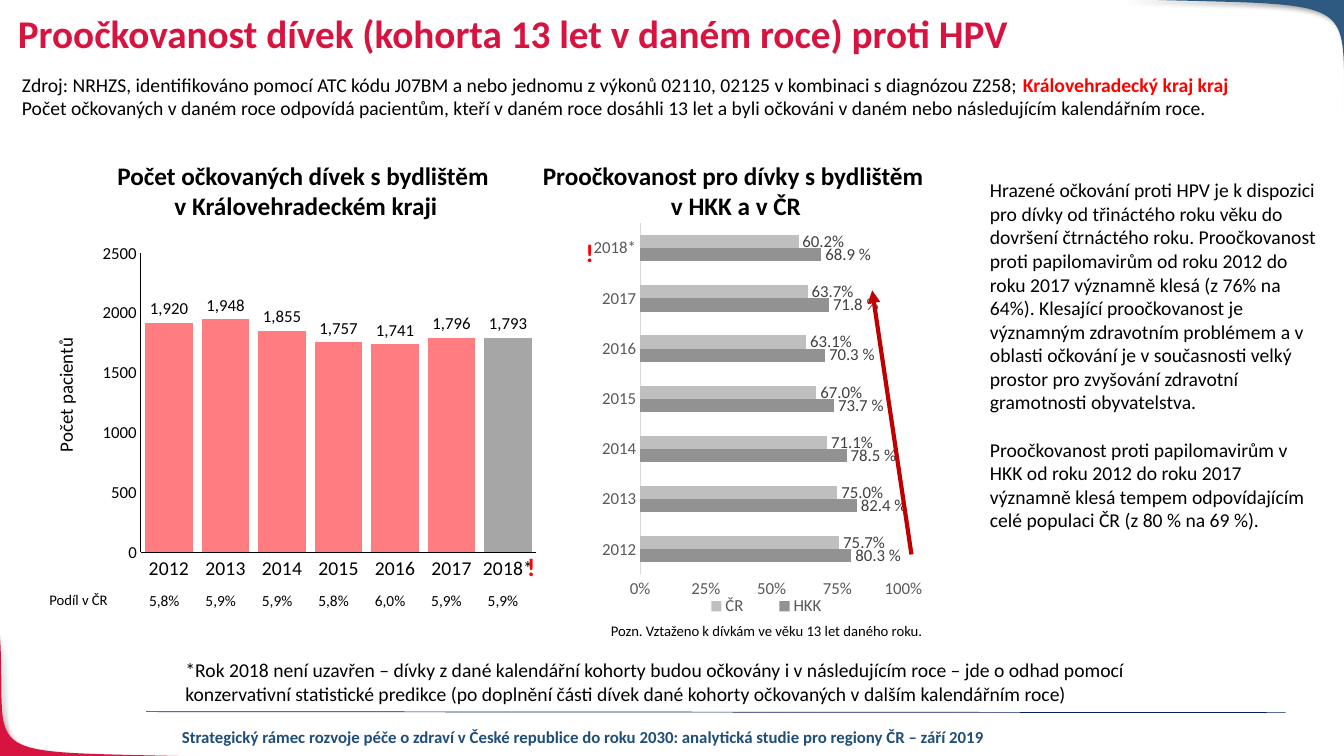
from lxml.etree import SubElement
from pptx import Presentation
from pptx.chart.data import CategoryChartData
from pptx.dml.color import RGBColor
from pptx.enum.chart import XL_CHART_TYPE, XL_LABEL_POSITION, XL_LEGEND_POSITION, XL_TICK_MARK
from pptx.enum.text import MSO_ANCHOR, PP_ALIGN
from pptx.oxml import parse_xml
from pptx.oxml.ns import nsdecls, qn
from pptx.util import Inches, Pt

presentation = Presentation()
presentation.slide_width = Inches(13.33)
presentation.slide_height = Inches(7.5)
slide = presentation.slides.add_slide(presentation.slide_layouts[6])


def set_font(font, size, color, bold=False):
    font.name = "Calibri"
    font.size = Pt(size)
    font.bold = bold
    font.color.rgb = RGBColor.from_string(color)


def add_text(box, lines, size, color="000000", bold=False, align=PP_ALIGN.LEFT, wrap=True):
    frame = slide.shapes.add_textbox(*map(Inches, box)).text_frame
    frame.word_wrap = wrap
    for index, line in enumerate(lines):
        paragraph = frame.add_paragraph() if index else frame.paragraphs[0]
        paragraph.text = line
        paragraph.alignment = align
        set_font(paragraph.runs[0].font, size, color, bold)
    return frame


# Corner decorations: one cubic curve each, closed at the slide corner
corners = [
    ("D71440", [(2.13, 7.51), (-0.34, 7.44), (0.08, 7.59), (0, 6.3)], (-0.01, 7.51)),
    ("2E5980", [(11.11, -0.01), (13.7, 0.07), (13.26, -0.1), (13.35, 1.42)], (13.35, -0.01)),
]
steps = 40
for color, controls, tip in corners:
    curve = []
    for step in range(steps + 1):
        t = step / steps
        weights = [(1 - t) ** 3, 3 * t * (1 - t) ** 2, 3 * t ** 2 * (1 - t), t ** 3]
        curve.append(tuple(Inches(sum(w * point[axis] for w, point in zip(weights, controls)))
                           for axis in (0, 1)))
    outline = slide.shapes.build_freeform(*curve[0])
    outline.add_line_segments(curve[1:] + [tuple(map(Inches, tip))], close=True)
    corner = outline.convert_to_shape()
    corner.fill.solid()
    corner.fill.fore_color.rgb = RGBColor.from_string(color)
    corner.line.fill.background()
    corner.shadow.inherit = False
    corner._element.spPr.find(qn("a:effectLst")).append(parse_xml(
        f'<a:outerShdw {nsdecls("a")} blurRad="{Pt(4)}" dist="{Pt(3)}" dir="2700000">'
        '<a:srgbClr val="000000"><a:alpha val="40000"/></a:srgbClr></a:outerShdw>'))

# Title, source and footer
title = add_text((0.08, 0.1, 11.5, 0.69),
                 ["Proočkovanost dívek (kohorta 13 let v daném roce) proti HPV"], 28, "D71440", True)
title.paragraphs[0].line_spacing = 0.9

source = add_text((0.12, 0.67, 12.23, 0.57), [
    "Zdroj: NRHZS, identifikováno pomocí ATC kódu J07BM a nebo jednomu z výkonů 02110, 02125 "
    "v kombinaci s diagnózou Z258; ",
    "Počet očkovaných v daném roce odpovídá pacientům, kteří v daném roce dosáhli 13 let "
    "a byli očkováni v daném nebo následujícím kalendářním roce."], 14, wrap=False)
region = source.paragraphs[0].add_run()
region.text = "Královehradecký kraj kraj"
set_font(region.font, 14, "FF0000", True)

add_text((1.57, 7.16, 8.43, 0.3), [
    "Strategický rámec rozvoje péče o zdraví v České republice do roku 2030: "
    "analytická studie pro regiony ČR – září 2019"], 12, "1F4E79", True, PP_ALIGN.CENTER)

# Commentary
commentary = add_text((9.72, 1.72, 3.46, 4.1), [
    "Hrazené očkování proti HPV je k dispozici pro dívky od třináctého roku věku do dovršení "
    "čtrnáctého roku. Proočkovanost proti papilomavirům od roku 2012 do roku 2017 významně klesá "
    "(z 76% na 64%). Klesající proočkovanost je významným zdravotním problémem a v oblasti očkování "
    "je v současnosti velký prostor pro zvyšování zdravotní gramotnosti obyvatelstva.",
    "Proočkovanost proti papilomavirům v HKK od roku 2012 do roku 2017 významně klesá tempem "
    "odpovídajícím celé populaci ČR (z 80 % na 69 %)."], 14)
commentary.paragraphs[1].space_before = Pt(17)

# Chart headings
add_text((1, 1.54, 4.07, 0.71), ["Počet očkovaných dívek s bydlištěm ", "v Královehradeckém kraji"],
         18, bold=True, align=PP_ALIGN.CENTER)
add_text((5.2, 1.54, 4.2, 0.71), ["Proočkovanost pro dívky s bydlištěm ", "v HKK a v ČR"],
         18, bold=True, align=PP_ALIGN.CENTER)

# Charts: series are (name, values, colour, label format)
years = ["2012", "2013", "2014", "2015", "2016", "2017", "2018*"]
charts = [
    dict(kind=XL_CHART_TYPE.COLUMN_CLUSTERED, box=(0.39, 2.34, 5.03, 3.49),
         gap=20, top=2500, unit=500, axis_format="General",
         year_size=14, text="000000", label="000000", line="000000",
         series=[("Series 1", [1920, 1948, 1855, 1757, 1741, 1796, 1793], "FF7C80", "#,##0")]),
    dict(kind=XL_CHART_TYPE.BAR_CLUSTERED, box=(5.84, 2.13, 3.39, 4.2),
         gap=182, top=1, unit=0.25, axis_format="0%",
         year_size=12, text="595959", label="404040", line="D9D9D9",
         series=[("HKK", [0.803, 0.824, 0.785, 0.737, 0.703, 0.718, 0.689], "929292", '0.0" "%'),
                 ("ČR", [0.757, 0.75, 0.711, 0.67, 0.631, 0.637, 0.602], "BFBFBF", "0.0%")]),
]
drawn = []
for design in charts:
    data = CategoryChartData()
    data.categories = years
    for name, values, color, label_format in design["series"]:
        data.add_series(name, values)
    chart = slide.shapes.add_chart(design["kind"], *map(Inches, design["box"]), data).chart
    drawn.append(chart)
    set_font(chart.font, 10, "000000")
    chart.has_title = False
    chart.has_legend = False

    plot = chart.plots[0]
    plot.gap_width = design["gap"]
    plot.overlap = 0
    plot.vary_by_categories = False
    for series, (name, values, color, label_format) in zip(plot.series, design["series"]):
        series.format.fill.solid()
        series.format.fill.fore_color.rgb = RGBColor.from_string(color)
        labels = series.data_labels
        labels.show_value = True
        labels.position = XL_LABEL_POSITION.OUTSIDE_END
        labels.number_format = label_format
        labels.number_format_is_linked = False
        set_font(labels.font, 12, design["label"])

    for axis, size in ((chart.category_axis, design["year_size"]), (chart.value_axis, 12)):
        axis.major_tick_mark = axis.minor_tick_mark = XL_TICK_MARK.NONE
        axis.has_major_gridlines = False
        set_font(axis.tick_labels.font, size, design["text"])
        axis.format.line.color.rgb = RGBColor.from_string(design["line"])
        axis.format.line.width = Pt(0.75)
    scale = chart.value_axis
    scale.minimum_scale = 0
    scale.maximum_scale = design["top"]
    scale.major_unit = design["unit"]
    scale.tick_labels.number_format = design["axis_format"]
    scale.tick_labels.number_format_is_linked = False

counts, coverage = drawn
estimate = counts.plots[0].series[0].points[6].format.fill
estimate.solid()
estimate.fore_color.rgb = RGBColor.from_string("A6A6A6")
axis_title = counts.value_axis.axis_title
patients = axis_title.text_frame.paragraphs[0]
patients.text = "Počet pacientů"
set_font(patients.runs[0].font, 13.5, "000000")

coverage.value_axis.format.line.fill.background()
coverage.has_legend = True
coverage.legend.position = XL_LEGEND_POSITION.BOTTOM
coverage.legend.include_in_layout = False
set_font(coverage.legend.font, 12, "595959")

# Place chart parts by fractions of the chart: x, y and, where sized, w, h
edges = [("xMode", "edge"), ("yMode", "edge")]
inner = [("layoutTarget", "inner")] + edges
for part, position, settings, fractions in [
        (counts._chartSpace.chart.plotArea, 0, inner, (0.2, 0.05, 0.78, 0.85)),
        (coverage._chartSpace.chart.plotArea, 0, inner, (0.15, 0.02, 0.77, 0.83)),
        (coverage.legend._element, 1, edges, (0.27, 0.89, 0.5, 0.07)),
        (axis_title._element, 1, edges, (0.02, 0.28))]:
    for old_layout in part.findall(qn("c:layout")):
        part.remove(old_layout)
    layout = parse_xml(f'<c:layout {nsdecls("c")}><c:manualLayout/></c:layout>')
    for tag, value in settings + list(zip("xywh", fractions)):
        SubElement(layout[0], qn(f"c:{tag}")).set("val", str(value))
    part.insert(position, layout)

# Share of the country total, aligned under the columns
shares = ["Podíl v ČR", "5,8%", "5,9%", "5,9%", "5,8%", "6,0%", "5,9%", "5,9%"]
share_table = slide.shapes.add_table(1, len(shares), Inches(0.21), Inches(5.77),
                                     Inches(5.06), Inches(0.38)).table
share_table.first_row = share_table.horz_banding = False
for index, share in enumerate(shares):
    share_table.columns[index].width = Inches(0.56 if index else 1.14)
    cell = share_table.cell(0, index)
    cell.fill.background()
    cell.vertical_anchor = MSO_ANCHOR.MIDDLE
    if index:
        cell.margin_left = cell.margin_right = cell.margin_top = Inches(0.01)
        cell.margin_bottom = 0
    paragraph = cell.text_frame.paragraphs[0]
    paragraph.text = share
    paragraph.alignment = PP_ALIGN.CENTER
    set_font(paragraph.runs[0].font, 11 if index else 10.5, "000000")

# Footer rule and falling trend arrow
for start, end, color, width in [((1.45, 7.06), (12.75, 7.07), "002060", 0.5),
                                 ((9.04, 5.5), (8.65, 2.88), "C00000", 3)]:
    stroke = slide.shapes.add_connector(1, *map(Inches, start + end))
    stroke.line.color.rgb = RGBColor.from_string(color)
    stroke.line.width = Pt(width)
    SubElement(stroke._element.spPr, qn("a:effectLst"))
trend_line = stroke.line._get_or_add_ln()
SubElement(trend_line, qn("a:tailEnd")).set("type", "triangle")

# Notes and warning marks for 2018
add_text((5.96, 6.12, 3.7, 0.29), ["Pozn. Vztaženo k dívkám ve věku 13 let daného roku."], 10.5)
for left, top in [(5.13, 5.42), (5.71, 2.31)]:
    add_text((left, top, 0.33, 0.41), ["!"], 18, "FF0000", True)
add_text((1.74, 6.48, 9.71, 0.57), [
    "*Rok 2018 není uzavřen – dívky z dané kalendářní kohorty budou očkovány i v následujícím roce "
    "– jde o odhad pomocí konzervativní statistické predikce (po doplnění části dívek dané kohorty "
    "očkovaných v dalším kalendářním roce)"], 14)

presentation.save("out.pptx")
